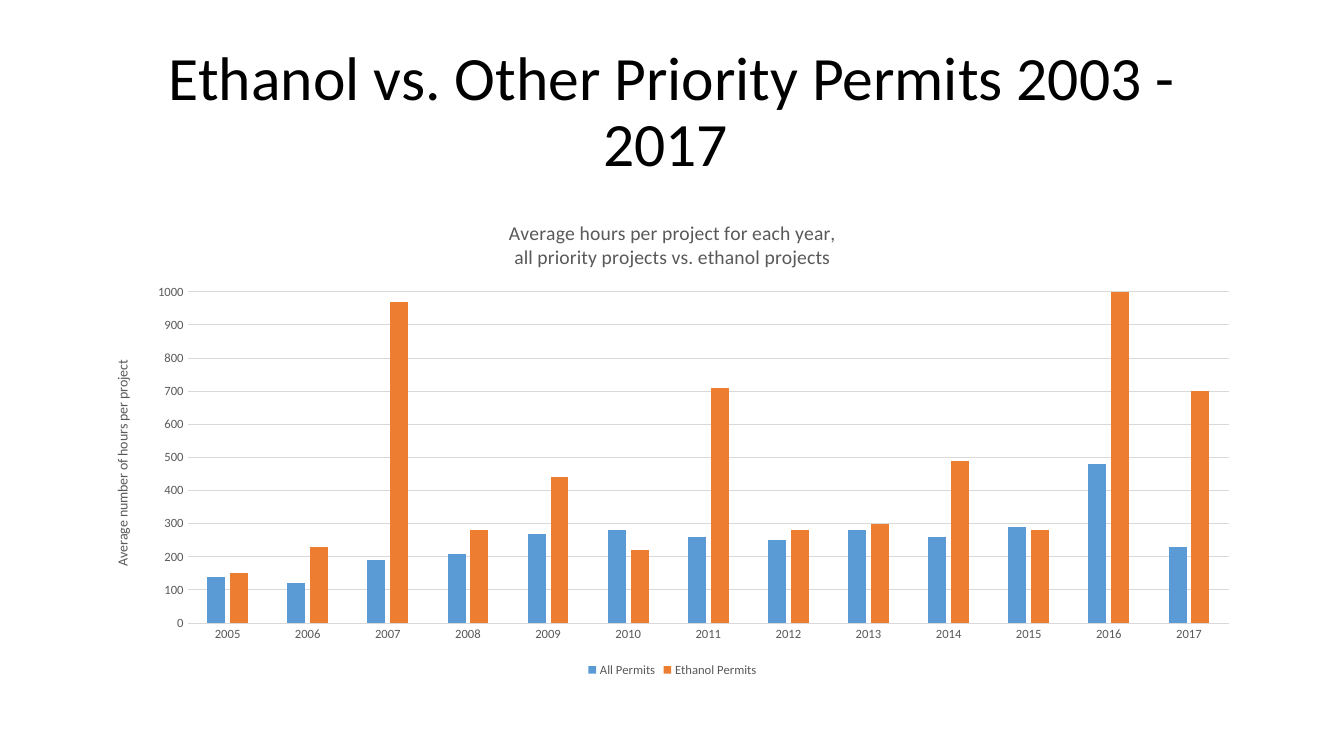
import pptx
import pptx.util
import pptx.dml.color
import pptx.chart.data
import pptx.enum.chart
import pptx.enum.text

Inches = pptx.util.Inches
Pt = pptx.util.Pt
GREY = "595959"
LIGHT_GREY = "D9D9D9"


def color(value):
    return pptx.dml.color.RGBColor.from_string(value)


def style_font(font, size, value):
    font.name = "Calibri"
    font.size = Pt(size)
    font.bold = False
    font.color.rgb = color(value)


presentation = pptx.Presentation()
presentation.slide_width = Inches(13.33)
presentation.slide_height = Inches(7.5)
slide = presentation.slides.add_slide(presentation.slide_layouts[5])

title = slide.shapes.title
title.left, title.top = Inches(0.92), Inches(0.4)
title.width, title.height = Inches(11.5), Inches(1.45)
title.text_frame.word_wrap = True
title.text_frame.auto_size = pptx.enum.text.MSO_AUTO_SIZE.NONE
title.text_frame.vertical_anchor = pptx.enum.text.MSO_ANCHOR.MIDDLE
paragraph = title.text_frame.paragraphs[0]
paragraph.alignment = pptx.enum.text.PP_ALIGN.CENTER
paragraph.line_spacing = 0.9
run = paragraph.add_run()
run.text = "Ethanol vs. Other Priority Permits 2003 - 2017 "
style_font(run.font, 44, "000000")

permits = [
    ("All Permits", "5B9BD5",
     [140, 120, 190, 210, 270, 280, 260, 250, 280, 260, 290, 480, 230]),
    ("Ethanol Permits", "ED7D31",
     [150, 230, 970, 280, 440, 220, 710, 280, 300, 490, 280, 1060, 700]),
]
chart_data = pptx.chart.data.CategoryChartData(number_format="0")
chart_data.categories = [str(year) for year in range(2005, 2018)]
for name, fill, hours in permits:
    chart_data.add_series(name, hours)

chart = slide.shapes.add_chart(
    pptx.enum.chart.XL_CHART_TYPE.COLUMN_CLUSTERED,
    Inches(0.92), Inches(2), Inches(11.5), Inches(4.76), chart_data,
).chart
style_font(chart.font, 10, "000000")

plot = chart.plots[0]
plot.vary_by_categories = False
plot.gap_width = 219
plot.overlap = -27
for series, (name, fill, hours) in zip(plot.series, permits):
    series.format.fill.solid()
    series.format.fill.fore_color.rgb = color(fill)
    series.invert_if_negative = False

chart.has_title = True
chart.chart_title.include_in_layout = False
chart_title_frame = chart.chart_title.text_frame
chart_title_lines = [
    "Average hours per project for each year,",
    "all priority projects vs. ethanol projects",
]
for index, line in enumerate(chart_title_lines):
    paragraph = chart_title_frame.add_paragraph() if index else chart_title_frame.paragraphs[0]
    run = paragraph.add_run()
    run.text = line
    style_font(run.font, 14, GREY)

for axis in (chart.category_axis, chart.value_axis):
    axis.major_tick_mark = pptx.enum.chart.XL_TICK_MARK.NONE
    axis.minor_tick_mark = pptx.enum.chart.XL_TICK_MARK.NONE
    style_font(axis.tick_labels.font, 9, GREY)

value_axis = chart.value_axis
value_axis.minimum_scale = 0
value_axis.maximum_scale = 1000
value_axis.major_unit = 100
value_axis.tick_labels.number_format = "0"
value_axis.tick_labels.number_format_is_linked = False
value_axis.format.line.fill.background()
value_axis.has_major_gridlines = True
for line in (chart.category_axis.format.line, value_axis.major_gridlines.format.line):
    line.color.rgb = color(LIGHT_GREY)
    line.width = Pt(0.75)

value_axis.has_title = True
run = value_axis.axis_title.text_frame.paragraphs[0].add_run()
run.text = "Average number of hours per project"
style_font(run.font, 10, GREY)

chart.has_legend = True
chart.legend.position = pptx.enum.chart.XL_LEGEND_POSITION.BOTTOM
chart.legend.include_in_layout = False
style_font(chart.legend.font, 9, GREY)

presentation.save("out.pptx")
